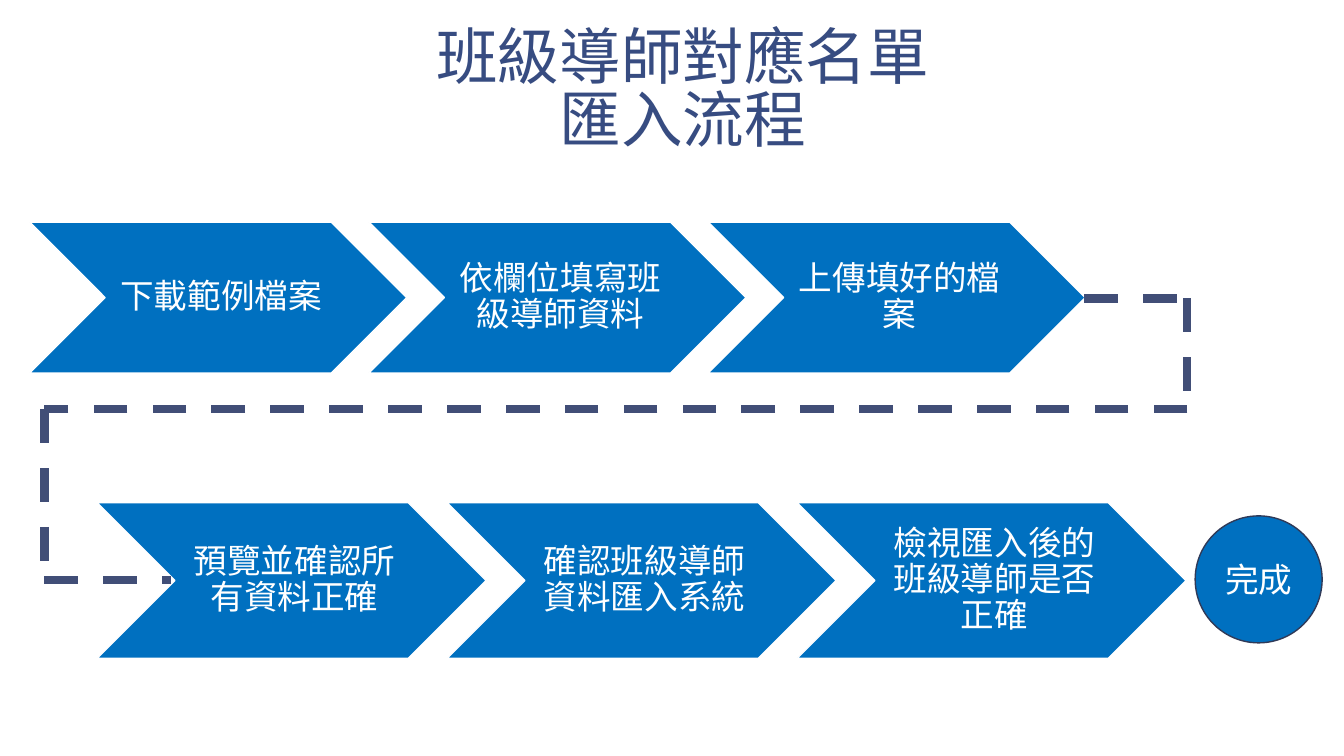
from dataclasses import dataclass
from itertools import pairwise

from lxml.etree import SubElement
from pptx import Presentation
from pptx.dml.color import RGBColor as Rgb
from pptx.enum.dml import MSO_LINE
from pptx.enum.shapes import MSO_CONNECTOR, MSO_SHAPE
from pptx.enum.text import MSO_ANCHOR as Anchor, PP_ALIGN as Align
from pptx.oxml.ns import qn
from pptx.util import Cm, Pt


@dataclass(frozen=True)
class Theme:
    title_color: Rgb = Rgb.from_string("374C81")
    step_fill: Rgb = Rgb.from_string("0070C0")
    white: Rgb = Rgb.from_string("FFFFFF")
    circle_edge: Rgb = Rgb.from_string("303A58")
    path_color: Rgb = Rgb.from_string("414E77")
    title_size: Pt = Pt(44)
    step_size: Pt = Pt(24)
    edge_width: Pt = Pt(1)
    path_width: Pt = Pt(6)
    step_font: str = "Quicksand"


class FlowSlide:
    """Draws the parts of a process slide; all lengths are in centimetres."""

    def __init__(self, slide, theme):
        self.shapes = slide.shapes
        self.theme = theme

    def title(self, left, top, width, height, lines):
        """Write one centred paragraph from (text, font name) lines."""
        box = self.shapes.add_textbox(Cm(left), Cm(top), Cm(width), Cm(height))
        frame = box.text_frame
        frame.word_wrap = True
        frame.vertical_anchor = Anchor.BOTTOM
        frame.margin_left = frame.margin_right = Cm(0.33)
        frame.margin_top = frame.margin_bottom = Cm(0.18)
        para = frame.paragraphs[0]
        para.alignment = Align.CENTER
        para.line_spacing = 0.85
        para.font.size = self.theme.title_size
        para.font.color.rgb = self.theme.title_color
        for number, (text, font_name) in enumerate(lines):
            if number:
                para.add_line_break()
            span = para.add_run()
            span.text = text
            span.font.name = font_name
            span.font.size = self.theme.title_size

    def step(self, kind, left, top, width, height, text, edge):
        shape = self.shapes.add_shape(kind, Cm(left), Cm(top), Cm(width), Cm(height))
        shape.shadow.inherit = False
        shape.fill.solid()
        shape.fill.fore_color.rgb = self.theme.step_fill
        shape.line.color.rgb = edge
        shape.line.width = self.theme.edge_width
        frame = shape.text_frame
        frame.word_wrap = True
        frame.vertical_anchor = Anchor.MIDDLE
        para = frame.paragraphs[0]
        para.text = text
        para.alignment = Align.CENTER
        para.font.name = self.theme.step_font
        para.font.size = self.theme.step_size
        para.font.color.rgb = self.theme.white
        return shape

    def chevron_row(self, left, top, width, labels):
        """Lay out chevrons that overlap by a tenth of their width."""
        for number, label in enumerate(labels):
            chevron = self.step(MSO_SHAPE.CHEVRON, left + number * 0.9 * width, top,
                                width, 0.4 * width, label, self.theme.white)
            frame = chevron.text_frame
            frame.margin_left = Cm(0.25)
            frame.margin_right = frame.margin_top = frame.margin_bottom = Cm(0.1)
            frame.paragraphs[0].line_spacing = 0.9

    def dashed_path(self, points):
        for start, end in pairwise(points):
            line = self.shapes.add_connector(
                MSO_CONNECTOR.STRAIGHT, *(Cm(value) for value in start + end))
            line.line.color.rgb = self.theme.path_color
            line.line.width = self.theme.path_width
            line.line.dash_style = MSO_LINE.DASH
            SubElement(line._element.spPr, qn("a:effectLst"))


def main():
    deck = Presentation()
    deck.slide_width, deck.slide_height = Cm(33.87), Cm(19.05)
    theme = Theme()
    page = FlowSlide(deck.slides.add_slide(deck.slide_layouts[6]), theme)

    page.title(3.1, 0.2, 28.22, 3.89,
               [("班級導師對應名單", "Noto Sans CJK SC"), ("匯入流程", "Roboto")])
    page.chevron_row(0.75, 5.6, 9.5,
                     ["下載範例檔案", "依欄位填寫班級導師資料", "上傳填好的檔案"])
    page.chevron_row(2.45, 12.67, 9.8,
                     ["預覽並確認所有資料正確", "確認班級導師資料匯入系統",
                      "檢視匯入後的班級導師是否正確"])

    right, left = 29.92, 1.12
    upper, middle, lower = 7.52, 10.31, 14.61
    page.dashed_path([(27.33, upper), (right, upper), (right, middle),
                      (left, middle), (left, lower), (4.32, lower)])
    page.step(MSO_SHAPE.OVAL, 30.12, 13, 3.2, 3.2, "完成", theme.circle_edge)

    deck.save("out.pptx")


if __name__ == "__main__":
    main()
